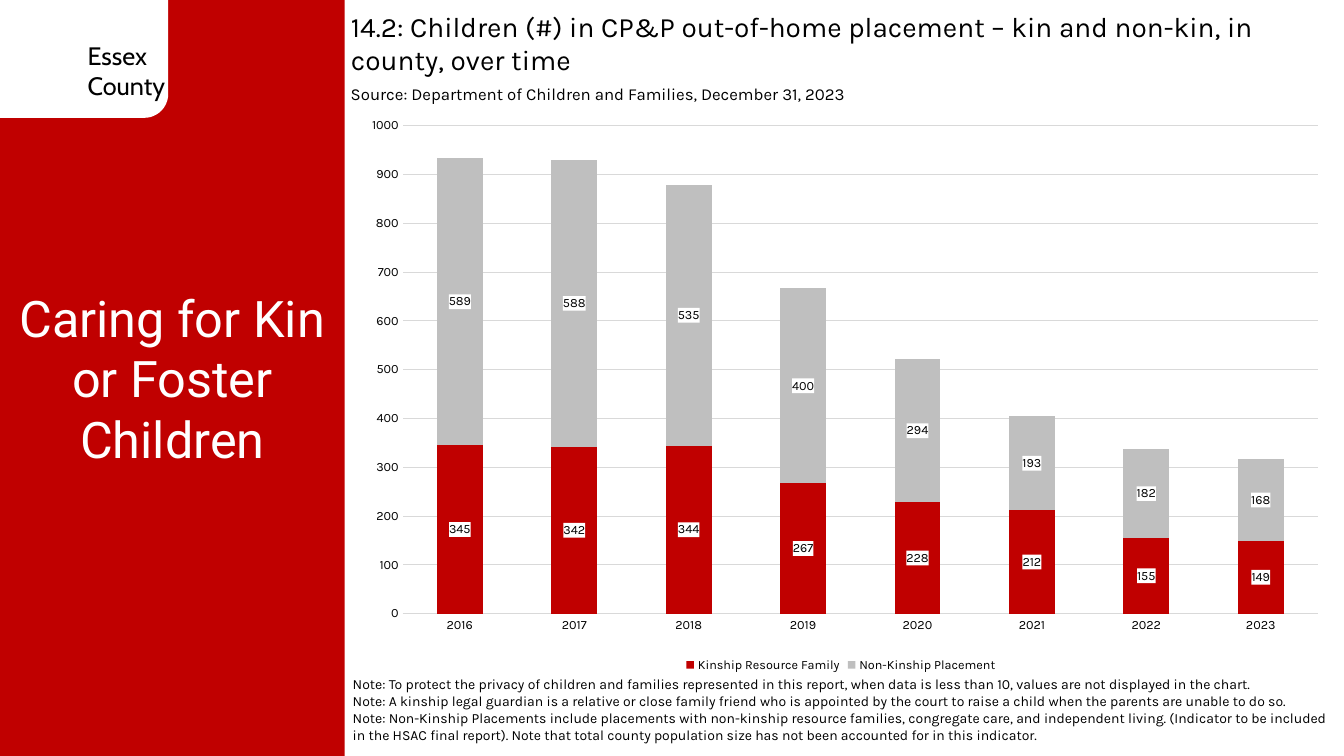
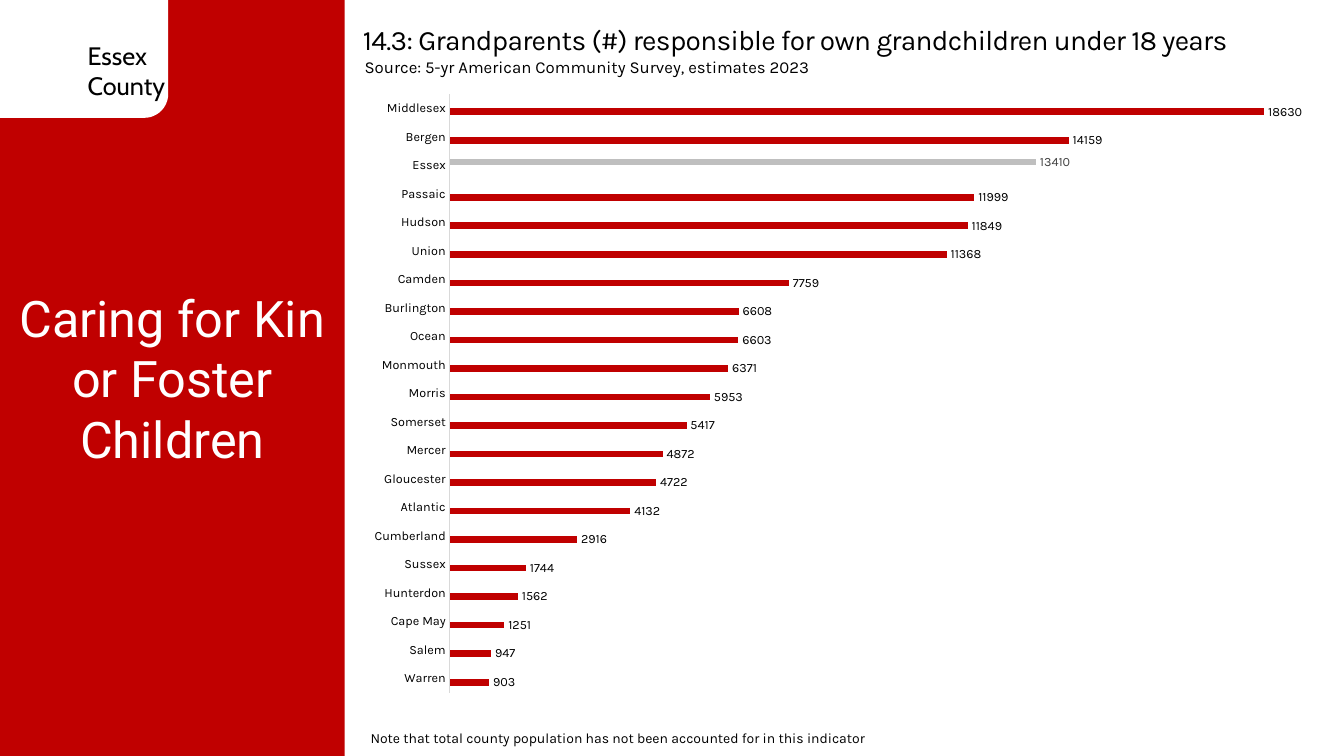
"""Build two county slides on kin and foster care."""
from dataclasses import dataclass

from lxml import etree
from pptx import Presentation
from pptx.chart.chart import Chart
from pptx.chart.data import CategoryChartData
from pptx.dml.color import RGBColor
from pptx.enum.chart import XL_CHART_TYPE, XL_LABEL_POSITION, XL_LEGEND_POSITION, XL_TICK_MARK
from pptx.enum.shapes import MSO_SHAPE
from pptx.enum.text import MSO_ANCHOR, MSO_AUTO_SIZE, PP_ALIGN
from pptx.oxml.ns import qn
from pptx.slide import Slide
from pptx.text.text import TextFrame
from pptx.util import Cm, Pt

STACK, BARS = XL_CHART_TYPE.COLUMN_STACKED, XL_CHART_TYPE.BAR_CLUSTERED
INSIDE, BEYOND = XL_LABEL_POSITION.CENTER, XL_LABEL_POSITION.OUTSIDE_END
BOTTOM, NO_TICK = XL_LEGEND_POSITION.BOTTOM, XL_TICK_MARK.NONE
RECT, ROUND = MSO_SHAPE.RECTANGLE, MSO_SHAPE.ROUNDED_RECTANGLE
TOP, MIDDLE = MSO_ANCHOR.TOP, MSO_ANCHOR.MIDDLE
LEFT, CENTER = PP_ALIGN.LEFT, PP_ALIGN.CENTER
FIXED = MSO_AUTO_SIZE.NONE


@dataclass(frozen=True)
class Theme:
    """Colours, fonts and type sizes."""
    red: str = "C00000"
    gray: str = "BFBFBF"
    rule: str = "D9D9D9"
    dark: str = "404040"
    black: str = "000000"
    white: str = "FFFFFF"
    body: str = "Karla"
    tab: str = "Cabin"
    band: str = "Roboto"
    topic: int = 36
    head: int = 20
    name: int = 18
    source: int = 12
    note: int = 10
    chart: int = 9


THEME = Theme()


@dataclass(frozen=True)
class Box:
    """A place on the slide in centimetres."""
    left: float
    top: float
    width: float
    height: float

    def cm(self) -> tuple[Cm, Cm, Cm, Cm]:
        """Return the four lengths."""
        return Cm(self.left), Cm(self.top), Cm(self.width), Cm(self.height)


@dataclass(frozen=True)
class Style:
    """The look of a block of text."""
    size: int
    font: str = THEME.body
    color: str = THEME.black
    align: PP_ALIGN = LEFT
    anchor: MSO_ANCHOR = TOP


@dataclass(frozen=True)
class Series:
    """One chart series."""
    name: str
    vals: tuple[int | None, ...]
    fill: str
    ink: str = THEME.black


@dataclass(frozen=True)
class Plot:
    """A chart and its scale."""
    kind: XL_CHART_TYPE
    box: Box
    inner: Box
    cats: tuple[str, ...]
    series: tuple[Series, ...]
    gap: int
    lap: int
    top: int
    place: XL_LABEL_POSITION


@dataclass(frozen=True)
class Page:
    """All that differs between slides."""
    title: str
    head: Box
    source: str
    cite: Box
    notes: tuple[str, ...]
    foot: Box
    plot: Plot
    space: int = 0


def rgb(code: str) -> RGBColor:
    """Turn a hex code into a colour."""
    return RGBColor.from_string(code)


def write(frame: TextFrame, lines: tuple[str, ...], style: Style) -> None:
    """Fill a frame with styled lines."""
    frame.text = "\n".join(lines)
    frame.word_wrap = True
    frame.auto_size = FIXED
    frame.vertical_anchor = style.anchor
    for para in frame.paragraphs:
        para.alignment = style.align
        para.font.size = Pt(style.size)
        para.font.name = style.font
        para.font.color.rgb = rgb(style.color)


def add_text(slide: Slide, box: Box, lines: tuple[str, ...], style: Style) -> None:
    """Add a text box."""
    write(slide.shapes.add_textbox(*box.cm()).text_frame, lines, style)


def add_block(slide: Slide, kind: MSO_SHAPE, box: Box, fill: str) -> None:
    """Add a plain filled shape."""
    shape = slide.shapes.add_shape(kind, *box.cm())
    shape.shadow.inherit = False
    shape.fill.solid()
    shape.fill.fore_color.rgb = rgb(fill)
    shape.line.fill.background()


def add_band(slide: Slide) -> None:
    """Add the side band, county tab and topic."""
    add_block(slide, RECT, Box(0, 0, 8.69, 19.05), THEME.red)
    add_block(slide, ROUND, Box(-0.84, -0.64, 5.08, 3.61), THEME.white)
    add_text(slide, Box(1.96, 0.89, 2.54, 1.8), ("Essex", "County"),
             Style(THEME.name, THEME.tab))
    add_text(slide, Box(0, 7.11, 8.69, 4.88), ("Caring for Kin or Foster Children",),
             Style(THEME.topic, THEME.band, THEME.white, CENTER))


def set_inner(chart: Chart, box: Box) -> None:
    """Fix the inner plot area as shares of the chart."""
    area = chart._chartSpace.find(".//" + qn("c:plotArea"))
    for old in area.findall(qn("c:layout")):
        area.remove(old)
    layout = etree.Element(qn("c:layout"))
    area.insert(0, layout)
    manual = etree.SubElement(layout, qn("c:manualLayout"))
    parts = {"layoutTarget": "inner", "xMode": "edge", "yMode": "edge",
             "x": box.left, "y": box.top, "w": box.width, "h": box.height}
    for tag, val in parts.items():
        etree.SubElement(manual, qn("c:" + tag)).set("val", str(val))


def add_chart(slide: Slide, plot: Plot) -> None:
    """Add a bar or column chart."""
    data = CategoryChartData()
    data.categories = plot.cats
    for item in plot.series:
        data.add_series(item.name, item.vals)
    chart = slide.shapes.add_chart(plot.kind, *plot.box.cm(), data).chart
    chart.has_title = False
    chart.font.size = Pt(THEME.chart)
    chart.font.name = THEME.body
    chart.font.color.rgb = rgb(THEME.black)
    set_inner(chart, plot.inner)

    stacked = plot.kind == STACK
    chart.has_legend = stacked
    if stacked:
        chart.legend.position = BOTTOM
        chart.legend.include_in_layout = False

    cats, vals = chart.category_axis, chart.value_axis
    cats.major_tick_mark = vals.major_tick_mark = NO_TICK
    cats.format.line.color.rgb = rgb(THEME.rule)
    cats.format.line.width = Pt(0.75)
    vals.minimum_scale, vals.maximum_scale = 0, plot.top
    vals.major_unit = plot.top / 10
    vals.visible = vals.has_major_gridlines = stacked
    if stacked:
        vals.format.line.fill.background()
        grid = vals.major_gridlines.format.line
        grid.color.rgb = rgb(THEME.rule)
        grid.width = Pt(0.75)

    group = chart.plots[0]
    group.gap_width, group.overlap = plot.gap, plot.lap
    group.vary_by_categories = False
    for item, bars in zip(plot.series, group.series):
        bars.format.fill.solid()
        bars.format.fill.fore_color.rgb = rgb(item.fill)
        bars.invert_if_negative = False
        tags = bars.data_labels
        tags.show_value = True
        tags.position = plot.place
        tags.font.size = Pt(THEME.chart)
        tags.font.name = THEME.body
        tags.font.color.rgb = rgb(item.ink)
        if stacked:
            back = etree.Element(qn("c:spPr"))
            fill = etree.SubElement(back, qn("a:solidFill"))
            etree.SubElement(fill, qn("a:srgbClr")).set("val", THEME.white)
            tags._element.find(qn("c:txPr")).addprevious(back)


def add_page(deck: Presentation, page: Page) -> None:
    """Add one slide."""
    slide = deck.slides.add_slide(deck.slide_layouts[5])
    add_band(slide)
    title = slide.shapes.title
    title.left, title.top, title.width, title.height = page.head.cm()
    write(title.text_frame, (page.title,), Style(THEME.head))
    if page.space:
        run = title.text_frame.paragraphs[0].runs[0]
        run._r.get_or_add_rPr().set("spc", str(page.space))
    add_chart(slide, page.plot)
    add_text(slide, page.cite, (page.source,), Style(THEME.source))
    add_text(slide, page.foot, page.notes, Style(THEME.note, anchor=MIDDLE))


PLACED = Plot(
    STACK, Box(8.92, 2.74, 24.54, 14.3), Box(0.05, 0.03, 0.94, 0.86),
    tuple(str(year) for year in range(2016, 2024)),
    (Series("Kinship Resource Family",
            (345, 342, 344, 267, 228, 212, 155, 149), THEME.red),
     Series("Non-Kinship Placement",
            (589, 588, 535, 400, 294, 193, 182, 168), THEME.gray)),
    gap=150, lap=100, top=1000, place=INSIDE)

HOME = "Essex"
COUNTS = {
    "Warren": 903, "Salem": 947, "Cape May": 1251, "Hunterdon": 1562, "Sussex": 1744,
    "Cumberland": 2916, "Atlantic": 4132, "Gloucester": 4722, "Mercer": 4872,
    "Somerset": 5417, "Morris": 5953, "Monmouth": 6371, "Ocean": 6603,
    "Burlington": 6608, "Camden": 7759, "Union": 11368, "Hudson": 11849,
    "Passaic": 11999, "Essex": 13410, "Bergen": 14159, "Middlesex": 18630,
}
ELDERS = Plot(
    BARS, Box(8.94, 2.06, 24.93, 15.72), Box(0.096, 0.02, 0.884, 0.96),
    tuple(COUNTS),
    (Series("Series 1", tuple(None if key == HOME else num for key, num in COUNTS.items()),
            THEME.red),
     Series("Series 2", tuple(num if key == HOME else None for key, num in COUNTS.items()),
            THEME.gray, THEME.dark)),
    gap=219, lap=0, top=20000, place=BEYOND)

PAGES = (
    Page("14.2: Children (#) in CP&P out-of-home placement – kin and non-kin, in county, over time",
         Box(8.59, 0.1, 25.2, 2.64),
         "Source: Department of Children and Families, December 31, 2023",
         Box(8.59, 1.98, 17.91, 0.76),
         ("Note: To protect the privacy of children and families represented in this report, "
          "when data is less than 10, values are not displayed in the chart.",
          "Note: A kinship legal guardian is a relative or close family friend who is appointed "
          "by the court to raise a child when the parents are unable to do so.",
          "Note: Non-Kinship Placements include placements with non-kinship resource families, "
          "congregate care, and independent living. (Indicator to be included in the HSAC final "
          "report). Note that total county population size has not been accounted for in this "
          "indicator."),
         Box(8.64, 16.71, 25.23, 2.34), PLACED),
    Page("14.3: Grandparents (#) responsible for own grandchildren under 18 years",
         Box(8.89, 0.43, 24.97, 1.12),
         "Source: 5-yr American Community Survey, estimates 2023",
         Box(8.94, 1.3, 17.91, 0.76),
         ("Note that total county population has not been accounted for in this indicator",),
         Box(9.09, 18.26, 23.7, 0.69), ELDERS, space=-50),
)


def main() -> None:
    """Build and save the deck."""
    deck = Presentation()
    deck.slide_width, deck.slide_height = Cm(33.87), Cm(19.05)
    for page in PAGES:
        add_page(deck, page)
    deck.save("out.pptx")


if __name__ == "__main__":
    main()
